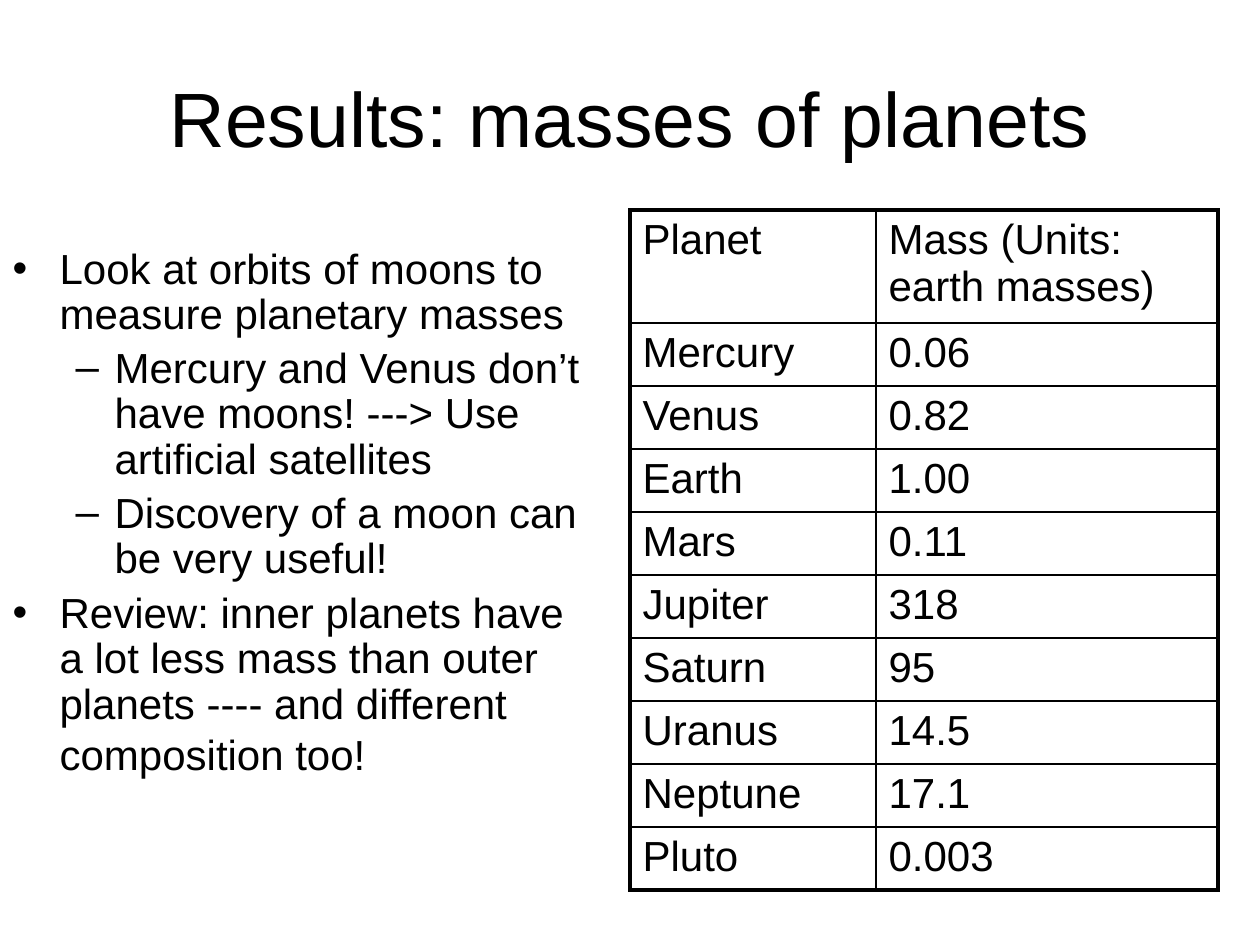
from lxml import etree
from pptx import Presentation
from pptx import util as u
from pptx.dml.color import RGBColor
from pptx.enum import text
from pptx.oxml.ns import qn

PX = u.Inches(1) / 126
COLORS = {"ink": "000000", "paper": "FFFFFF"}
FONT = "Arial"
THIN, THICK = 1, 2.25

BULLETS = [
    (0, "Look at orbits of moons to measure planetary masses"),
    (1, "Mercury and Venus don’t have moons! ---> Use artificial satellites"),
    (1, "Discovery of a moon can be very useful!"),
    (0, "Review: inner planets have a lot less mass than outer planets ---- "
        "and different composition too!"),
]
INDENTS = [(47, -47), (102, -39)]  # left margin and first line, by level

MASSES = [
    ("Planet", "Mass (Units: earth masses)"),
    ("Mercury", "0.06"),
    ("Venus", "0.82"),
    ("Earth", "1.00"),
    ("Mars", "0.11"),
    ("Jupiter", "318"),
    ("Saturn", "95"),
    ("Uranus", "14.5"),
    ("Neptune", "17.1"),
    ("Pluto", "0.003"),
]


def px(length):
    return u.Emu(round(length * PX))


def place(shape, box):
    shape.left, shape.top, shape.width, shape.height = map(px, box)


def style(font, size):
    font.name = FONT
    font.size = u.Pt(size)
    font.bold = False
    font.color.rgb = RGBColor.from_string(COLORS["ink"])


def add_title(slide, box):
    title = slide.shapes.title
    place(title, box)
    title.text_frame.text = "Results: masses of planets"
    style(title.text_frame.paragraphs[0].font, 44)


def add_bullets(slide, box):
    body = slide.placeholders[1]
    place(body, box)
    frame = body.text_frame
    frame.auto_size = text.MSO_AUTO_SIZE.NONE
    frame.text = "\n".join(line for _, line in BULLETS)
    for paragraph, (level, _) in zip(frame.paragraphs, BULLETS):
        paragraph.level = level
        paragraph.line_spacing = 0.9
        style(paragraph.font, 24)
        margin, first_line = INDENTS[level]
        properties = paragraph._p.get_or_add_pPr()
        properties.set("marL", str(px(margin)))
        properties.set("indent", str(px(first_line)))
    # A larger closing space gives the last line its extra height.
    closing = frame.paragraphs[-1].add_run()
    closing.text = " "
    style(closing.font, 28)


def set_borders(cell, widths):
    """Draw the cell's edges; widths maps L, R, T and B to points."""
    properties = cell._tc.get_or_add_tcPr()
    for side, width in widths.items():
        line = etree.SubElement(properties, qn(f"a:ln{side}"), w=str(u.Pt(width)))
        fill = etree.SubElement(line, qn("a:solidFill"))
        etree.SubElement(fill, qn("a:srgbClr"), val=COLORS["ink"])


def add_masses(slide, box, column_widths, header_height):
    last_row, last_column = len(MASSES) - 1, len(column_widths) - 1
    table = slide.shapes.add_table(
        len(MASSES), len(column_widths), *map(px, box)).table
    table.first_row = table.horz_banding = False
    for column, width in zip(table.columns, column_widths):
        column.width = px(width)
    row_height = (box[3] - header_height) / last_row
    for r, values in enumerate(MASSES):
        table.rows[r].height = px(row_height if r else header_height)
        for c, value in enumerate(values):
            cell = table.cell(r, c)
            cell.text = value
            style(cell.text_frame.paragraphs[0].font, 24)
            set_borders(cell, {
                "L": THICK if c == 0 else THIN,
                "R": THICK if c == last_column else THIN,
                "T": THICK if r == 0 else THIN,
                "B": THICK if r == last_row else THIN,
            })
            cell.fill.background()


def main():
    deck = Presentation()
    deck.slide_width, deck.slide_height = px(1260), px(945)
    slide = deck.slides.add_slide(deck.slide_layouts[1])
    background = slide.background.fill
    background.solid()
    background.fore_color.rgb = RGBColor.from_string(COLORS["paper"])
    add_title(slide, (63, 38, 1134, 158))
    add_bullets(slide, (0, 242, 598, 598))
    add_masses(slide, (630, 210, 588, 680), (246, 342), 113)
    deck.save("out.pptx")


if __name__ == "__main__":
    main()
